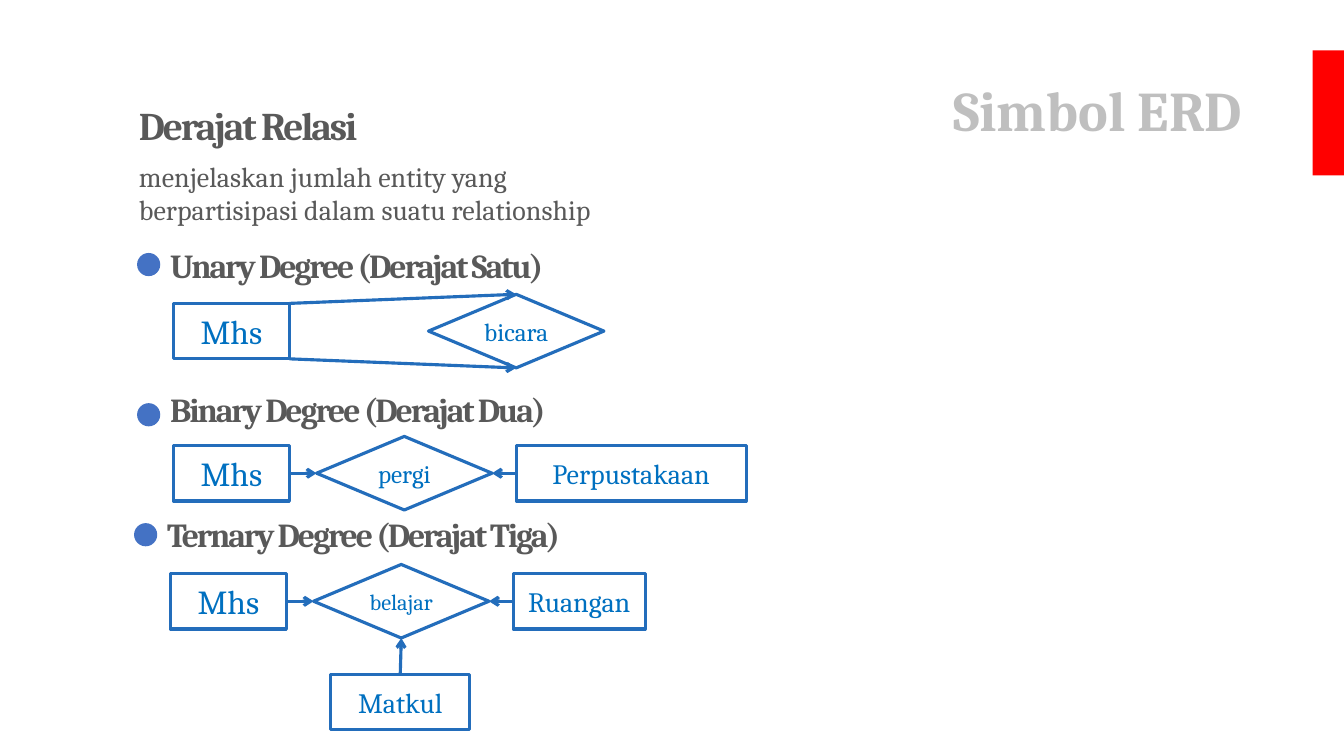
from lxml import etree
from pptx import Presentation
from pptx.dml.color import RGBColor
from pptx.enum import shapes as kinds, text as txt
from pptx.oxml import ns
from pptx.util import Inches, Pt

FONT = "Cambria"
RED = RGBColor(0xFF, 0x00, 0x00)
LIGHT_GREY = RGBColor(0xBF, 0xBF, 0xBF)
DARK_GREY = RGBColor(0x59, 0x59, 0x59)
DOT_BLUE = RGBColor(0x44, 0x72, 0xC4)
LINE_BLUE = RGBColor(0x23, 0x6D, 0xBB)
TEXT_BLUE = RGBColor(0x00, 0x70, 0xC0)

RECT = kinds.MSO_SHAPE.RECTANGLE
DIAMOND = kinds.MSO_SHAPE.DIAMOND
OVAL = kinds.MSO_SHAPE.OVAL
TOP, LEFT, BOTTOM, RIGHT = range(4)

MHS_W, ENTITY_H = 1.15, 0.55
RELATION_W, RELATION_H = 1.74, 0.73
DOT = 0.23


def write(shape, words, size, color, bold=False, align=txt.PP_ALIGN.LEFT,
          anchor=txt.MSO_ANCHOR.TOP, tracking=None, line_spacing=None):
    frame = shape.text_frame
    frame.word_wrap = True
    frame.vertical_anchor = anchor
    paragraph = frame.paragraphs[0]
    paragraph.alignment = align
    if line_spacing:
        paragraph.line_spacing = line_spacing
    run = paragraph.add_run()
    run.text = words
    run.font.name = FONT
    run.font.size = Pt(size)
    run.font.bold = bold
    run.font.color.rgb = color
    if tracking:
        run.font._element.set("spc", str(int(tracking * 100)))


def add_text(slide, box, words, size, **style):
    label = slide.shapes.add_textbox(*map(Inches, box))
    write(label, words, size, DARK_GREY, **style)
    label.text_frame.auto_size = txt.MSO_AUTO_SIZE.SHAPE_TO_FIT_TEXT


def add_solid(slide, kind, box, color):
    solid = slide.shapes.add_shape(kind, *map(Inches, box))
    solid.shadow.inherit = False
    solid.fill.solid()
    solid.fill.fore_color.rgb = color
    solid.line.fill.background()


def add_node(slide, kind, box, words, size):
    """Outlined entity (rectangle) or relation (diamond) with a centred name."""
    node = slide.shapes.add_shape(kind, *map(Inches, box))
    node.shadow.inherit = False
    node.fill.background()
    node.line.color.rgb = LINE_BLUE
    node.line.width = Pt(2.25)
    write(node, words, size, TEXT_BLUE, align=txt.PP_ALIGN.CENTER,
          anchor=txt.MSO_ANCHOR.MIDDLE)
    return node


def add_arrow(slide, relation, end_side, entity=None, start_side=None, start=(0, 0)):
    """Arrow to a side of the relation, from an entity's side or a free point."""
    arrow = slide.shapes.add_connector(kinds.MSO_CONNECTOR.STRAIGHT, *start, *start)
    if entity is not None:
        arrow.begin_connect(entity, start_side)
    arrow.end_connect(relation, end_side)
    arrow.line.color.rgb = LINE_BLUE
    arrow.line.width = Pt(2.25)
    etree.SubElement(arrow.line._get_or_add_ln(), ns.qn("a:tailEnd"), type="arrow")
    etree.SubElement(arrow._element.spPr, ns.qn("a:effectLst"))


def add_degree(slide, left, heading_top, dot_top, row_top, heading,
               relation_dx, relation_name, relation_size):
    """Bulleted heading with the Mhs entity and its relation in a row below."""
    add_text(slide, (left + 0.23, heading_top, 4.5, 0.5), heading, 24,
             bold=True, tracking=-1.5)
    add_solid(slide, OVAL, (left, dot_top, DOT, DOT), DOT_BLUE)
    mhs = add_node(slide, RECT, (left + 0.36, row_top, MHS_W, ENTITY_H), "Mhs", 24)
    relation_top = row_top + (ENTITY_H - RELATION_H) / 2
    relation = add_node(slide, DIAMOND,
                        (left + relation_dx, relation_top, RELATION_W, RELATION_H),
                        relation_name, relation_size)
    return mhs, relation


def add_unary(slide, left, top):
    mhs, relation = add_degree(slide, left, top, top + 0.13, top + 0.63,
                               "Unary Degree (Derajat Satu)", 2.89, "bicara", 18)
    right = mhs.left + mhs.width
    add_arrow(slide, relation, TOP, start=(right, mhs.top))
    add_arrow(slide, relation, BOTTOM, start=(right, mhs.top + mhs.height))


def add_pair(slide, left, heading_top, dot_top, row_top, heading,
             relation_name, relation_size, partner_name, partner_w):
    """Degree whose relation has Mhs on its left and a partner on its right."""
    mhs, relation = add_degree(slide, left, heading_top, dot_top, row_top, heading,
                               1.78, relation_name, relation_size)
    partner = add_node(slide, RECT, (left + 3.76, row_top, partner_w, ENTITY_H),
                       partner_name, 20)
    add_arrow(slide, relation, LEFT, mhs, RIGHT)
    add_arrow(slide, relation, RIGHT, partner, LEFT)
    return relation


def add_binary(slide, left, top):
    add_pair(slide, left, top, top + 0.19, top + 0.61,
             "Binary Degree (Derajat Dua)", "pergi", 18, "Perpustakaan", 2.28)


def add_ternary(slide, left, top):
    relation = add_pair(slide, left, top, top + 0.14, top + 0.64,
                        "Ternary Degree (Derajat Tiga)", "belajar", 16, "Ruangan", 1.31)
    matkul = add_node(slide, RECT, (left + 1.95, top + 1.64, 1.38, ENTITY_H),
                      "Matkul", 20)
    add_arrow(slide, relation, BOTTOM, matkul, TOP)


def add_header(slide, left, top, width, height):
    title = slide.shapes.title
    title.left, title.top = Inches(left), Inches(top)
    title.width, title.height = Inches(width), Inches(height)
    write(title, "Simbol ERD", 40, LIGHT_GREY, bold=True, align=txt.PP_ALIGN.RIGHT,
          anchor=txt.MSO_ANCHOR.MIDDLE, line_spacing=0.9)
    add_solid(slide, RECT, (left + width + 0.6, top + 0.1, 0.64, 1.24), RED)


def add_introduction(slide, left, top):
    add_text(slide, (left, top, 2.42, 0.57), "Derajat Relasi", 28,
             bold=True, tracking=-1.5)
    add_text(slide, (left, top + 0.57, 5.38, 0.77),
             "menjelaskan jumlah entity yang berpartisipasi dalam suatu relationship", 20)


def main():
    deck = Presentation()
    deck.slide_width, deck.slide_height = Inches(13.33), Inches(7.5)
    slide = deck.slides.add_slide(deck.slide_layouts[5])
    add_header(slide, 0.92, 0.4, 11.5, 1.45)
    add_introduction(slide, 1.28, 0.96)
    add_unary(slide, 1.36, 2.38)
    add_binary(slide, 1.36, 3.81)
    add_ternary(slide, 1.33, 5.05)
    deck.save("out.pptx")


if __name__ == "__main__":
    main()
